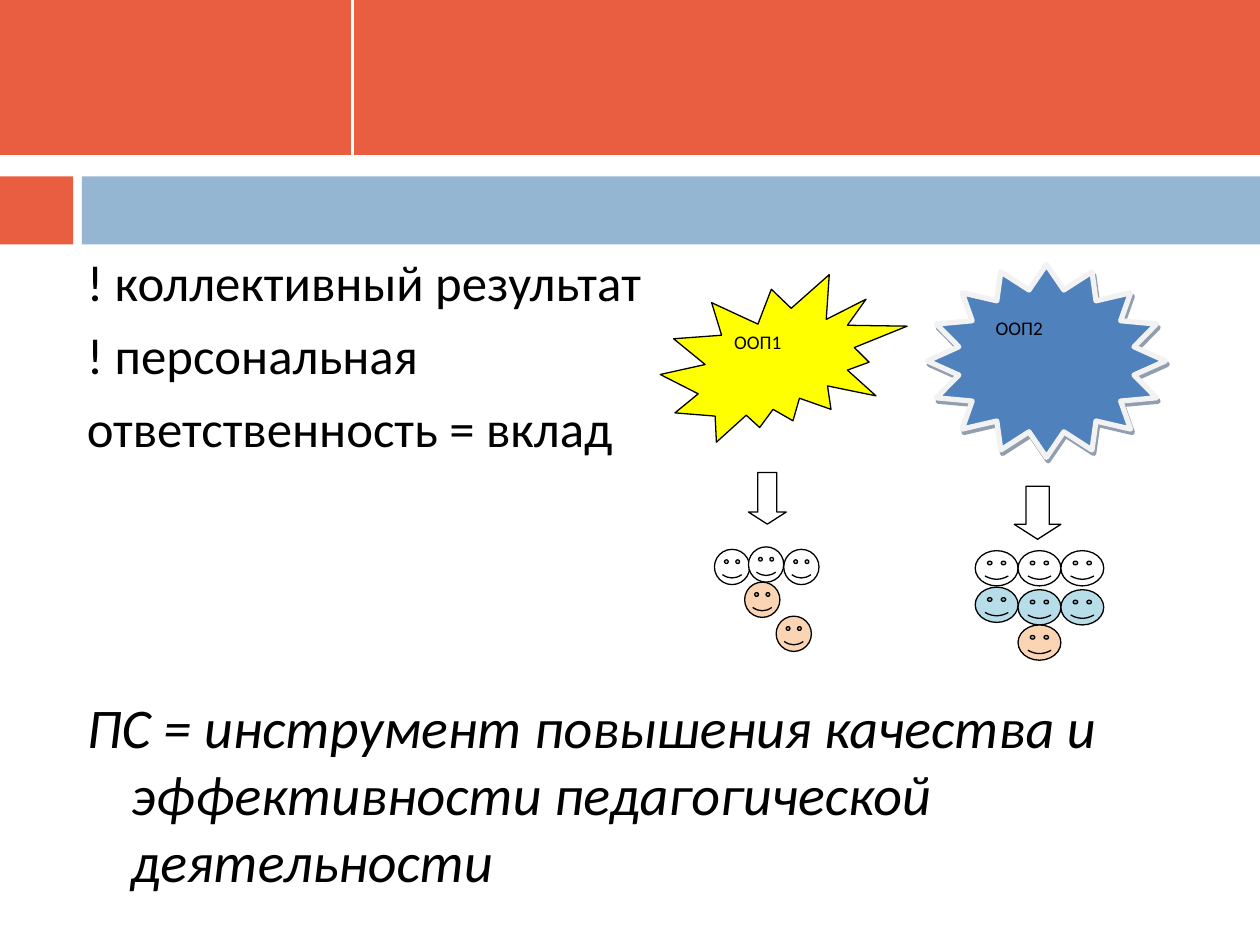
from lxml.etree import SubElement
from pptx import Presentation
from pptx.dml.color import RGBColor
from pptx.enum.shapes import MSO_CONNECTOR, MSO_SHAPE as Kind
from pptx.enum.text import MSO_ANCHOR, PP_ALIGN
from pptx.oxml.ns import qn
from pptx.util import Inches, Pt

RED = RGBColor(0xE9, 0x5E, 0x40)
SKY = RGBColor(0x94, 0xB6, 0xD2)
WHITE = RGBColor(0xFF, 0xFF, 0xFF)
BLACK = RGBColor(0, 0, 0)
YELLOW = RGBColor(0xFF, 0xFF, 0)
BLUE = RGBColor(0x4F, 0x81, 0xBD)
PALE = RGBColor(0xF2, 0xF2, 0xF2)
AQUA = RGBColor(0xB6, 0xDD, 0xE8)
PEACH = RGBColor(0xFB, 0xD4, 0xB4)
FONT = "Calibri"


def write(para, text, size=29, italic=False, before=0, after=0, hang=0):
    """Fill a paragraph with formatted text."""
    if hang:
        props = para._p.get_or_add_pPr()
        props.set("marL", str(Inches(hang)))
        props.set("indent", str(-Inches(hang)))
        SubElement(props, qn("a:buNone"))
    para.alignment = PP_ALIGN.LEFT
    para.space_before, para.space_after = Pt(before), Pt(after)
    run = para.add_run()
    run.text = text
    font = run.font
    font.name, font.size, font.italic = FONT, Pt(size), italic
    font.color.rgb = BLACK


def add_form(shapes, kind, box, fill, line=None, width=0.75):
    form = shapes.add_shape(kind, *map(Inches, box))
    form.shadow.inherit = False
    form.fill.solid()
    form.fill.fore_color.rgb = fill
    if line is None:
        form.line.fill.background()
    else:
        form.line.color.rgb = line
        form.line.width = Pt(width)
    return form


def add_star(shapes, kind, box, text, fill, line=BLACK, width=0.75):
    star = add_form(shapes, kind, box, fill, line, width)
    frame = star.text_frame
    frame.word_wrap = True
    frame.vertical_anchor = MSO_ANCHOR.TOP
    write(frame.paragraphs[0], text, size=11, after=10)
    return star


def add_shade(form):
    """Give a form a hard, half-clear shadow."""
    effects = form._element.spPr.find(qn("a:effectLst"))
    shade = SubElement(effects, qn("a:outerShdw"), blurRad="0",
                       dist=str(Pt(2.2)), dir=str(63 * 60000),
                       algn="ctr", rotWithShape="0")
    color = SubElement(shade, qn("a:srgbClr"), val="243F60")
    SubElement(color, qn("a:alpha"), val="50000")


def add_arrow(shapes, box):
    arrow = add_form(shapes, Kind.DOWN_ARROW, box, WHITE, BLACK)
    arrow.adjustments[1] = 0.32


def add_faces(shapes, spots, width, height=0.28):
    for left, top, fill in spots:
        add_form(shapes, Kind.SMILEY_FACE, (left, top, width, height),
                 fill, BLACK)


def add_bands(shapes):
    for box, fill in (
        ((0, 0, 10, 1.23), RED),
        ((0, 1.35, 10, 0.35), WHITE),
        ((0, 1.4, 0.58, 0.54), RED),
        ((0.65, 1.4, 9.35, 0.54), SKY),
    ):
        add_form(shapes, Kind.RECTANGLE, box, fill)
    rule = shapes.add_connector(MSO_CONNECTOR.STRAIGHT, Inches(2.8), 0,
                                Inches(2.8), Inches(1.23))
    rule.line.color.rgb = WHITE
    rule.line.width = Pt(1.5)
    SubElement(rule._element.spPr, qn("a:effectLst"))


def add_body(shapes):
    box = shapes.add_textbox(*map(Inches, (0.59, 1.94, 8.92, 4.92)))
    frame = box.text_frame
    frame.word_wrap = True
    lines = (
        ("! коллективный результат", {}),
        ("! персональная", {"before": 7}),
        ("ответственность = вклад", {"before": 7}),
        ("ПС = инструмент повышения качества и эффективности "
         "педагогической деятельности",
         {"before": 134, "size": 32, "italic": True}),
    )
    for i, (text, style) in enumerate(lines):
        para = frame.add_paragraph() if i else frame.paragraphs[0]
        write(para, text, hang=0.35, **style)


def add_second(shapes):
    """Draw the second programme and its team."""
    star = add_star(shapes, Kind.STAR_16_POINT, (7.36, 2.1, 1.89, 1.53),
                    "ООП2", BLUE, PALE, 3)
    add_shade(star)
    step = 0.34
    cols = [7.74 + step * i for i in range(3)]
    spots = [(x, 4.37, WHITE) for x in cols]
    spots += [(x, y, AQUA) for x, y in zip(cols, (4.66, 4.68, 4.68))]
    spots.append((cols[1], 4.96, PEACH))
    add_faces(shapes, spots, step)
    add_arrow(shapes, (8.05, 3.86, 0.37, 0.42))


def add_first(shapes):
    """Draw the first programme and its team."""
    add_star(shapes, Kind.EXPLOSION2, (5.24, 2.18, 1.96, 1.33),
             "ООП1", YELLOW)
    add_faces(shapes, (
        (5.67, 4.36, WHITE), (5.91, 4.62, PEACH), (6.16, 4.89, PEACH),
        (5.94, 4.34, WHITE), (6.22, 4.36, WHITE),
    ), 0.28)
    add_arrow(shapes, (5.94, 3.75, 0.3, 0.41))


def main():
    deck = Presentation()
    deck.slide_width, deck.slide_height = Inches(10), Inches(7.5)
    shapes = deck.slides.add_slide(deck.slide_layouts[6]).shapes
    add_bands(shapes)
    add_body(shapes)
    add_second(shapes.add_group_shape().shapes)
    add_first(shapes.add_group_shape().shapes)
    deck.save("out.pptx")


if __name__ == "__main__":
    main()
